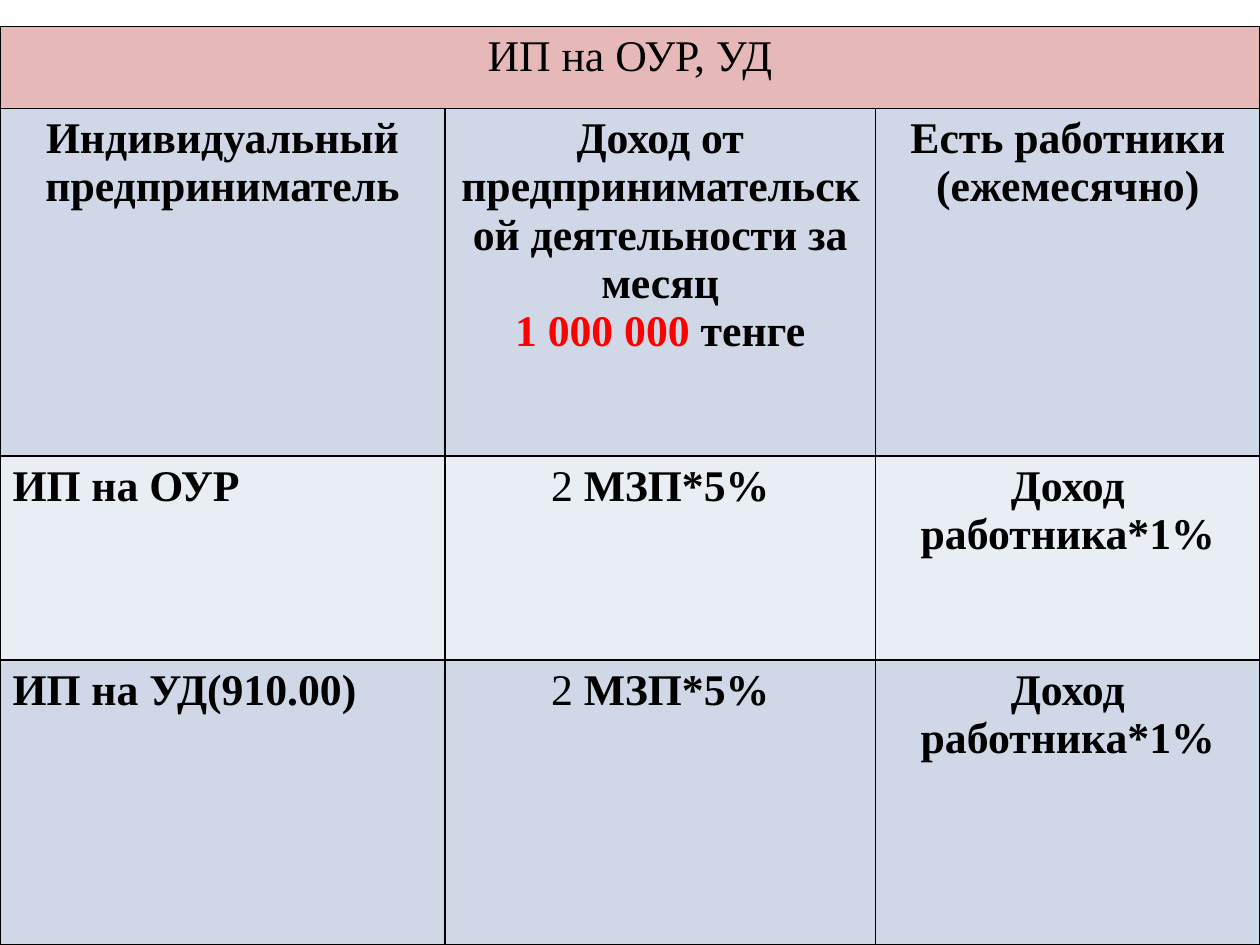
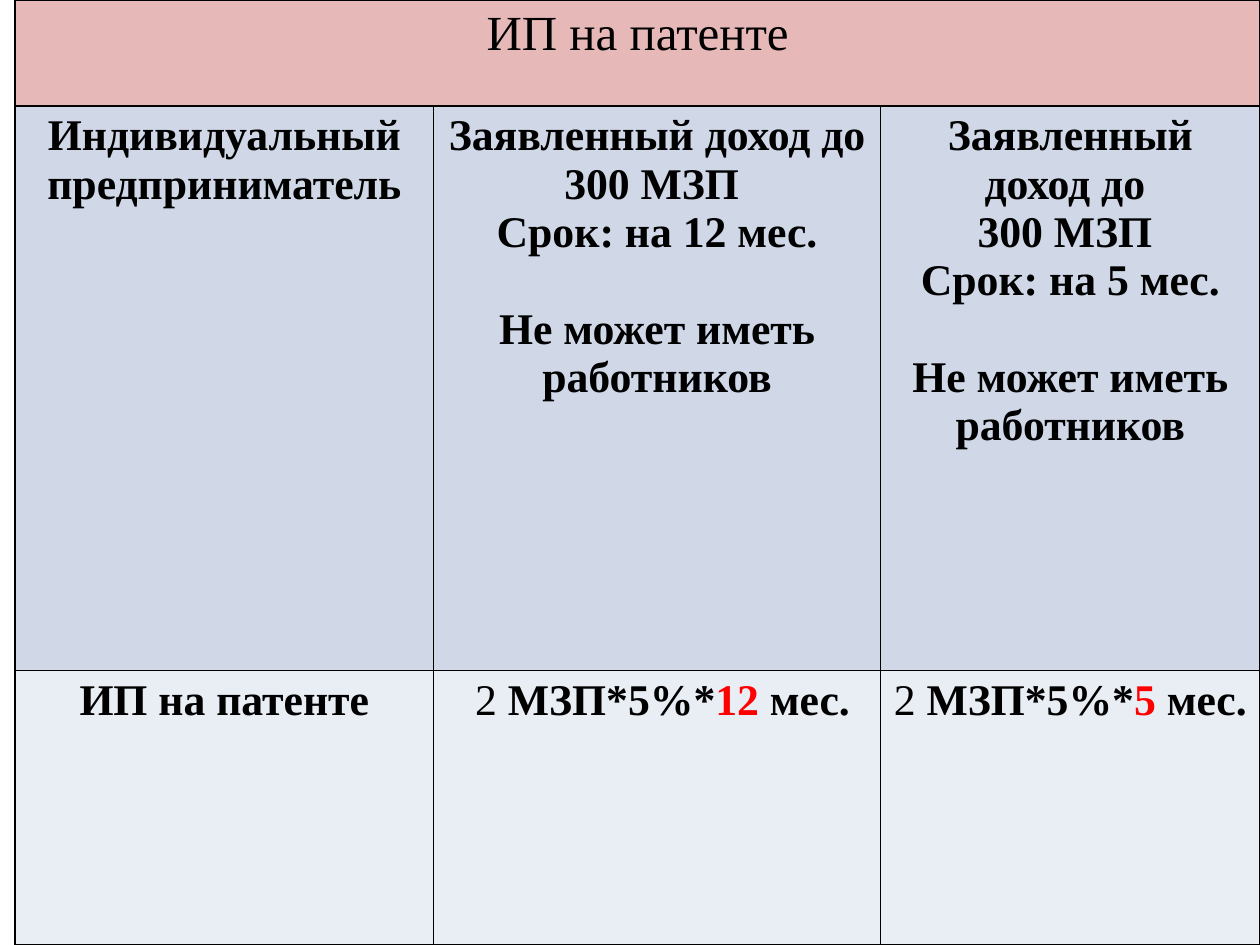
"""Build two slides with tables of monthly payments for sole traders."""
from dataclasses import dataclass

from lxml import etree
from pptx import Presentation
from pptx.dml.color import RGBColor
from pptx.enum.text import PP_ALIGN
from pptx.oxml.ns import qn
from pptx.util import Inches, Pt

LEFT, MID = PP_ALIGN.LEFT, PP_ALIGN.CENTER
FONT = "Times New Roman"
SIZE = 25
GAP = Pt(27.6)
HUES = {
    "ink": "000000",
    "red": "FF0000",
    "head": "E6B9B8",
    "dark": "D0D8E8",
    "pale": "E9EDF4",
}


@dataclass(frozen=True)
class Bit:
    text: str
    bold: bool = True
    hue: str = "ink"
    size: float = SIZE


@dataclass(frozen=True)
class Line:
    bits: tuple[Bit, ...]
    align: PP_ALIGN = MID
    gap: bool = False


Entry = tuple[Line, ...]


@dataclass(frozen=True)
class Grid:
    title: Bit
    left: float
    top: float
    cols: tuple[float, ...]
    rows: tuple[float, ...]
    body: tuple[tuple[Entry, ...], ...]


def plain(*texts: str, align: PP_ALIGN = MID) -> Entry:
    return tuple(Line((Bit(text),), align) for text in texts)


def rate(*bits: Bit, lead: str = "2 ") -> Entry:
    return (Line((Bit(lead, bold=False), *bits)),)


def term(months: int) -> Entry:
    lines = plain("Заявленный доход до ", "300 МЗП ", f"Срок: на {months} мес.")
    return (*lines, Line((Bit("Не может иметь работников"),), gap=True))


def patent(months: int, lead: str = "2 ") -> Entry:
    return rate(Bit("МЗП*5%*"), Bit(str(months), hue="red"), Bit(" мес."), lead=lead)


def regime(name: str) -> tuple[Entry, ...]:
    return plain(name, align=LEFT), rate(Bit("МЗП*5%")), plain("Доход работника*1%")


OWNER = plain("Индивидуальный предприниматель")
INCOME = (
    *plain("Доход от предпринимательской деятельности за месяц"),
    Line((Bit("1 000 000 ", hue="red"), Bit("тенге"))),
)

GRIDS = (
    Grid(
        Bit("ИП на ОУР, УД", bold=False), 0, 0.21,
        (3.53, 3.42, 3.05), (0.65, 2.76, 1.62, 2.26),
        (
            (OWNER, INCOME, plain("Есть работники", "(ежемесячно)")),
            regime("ИП на ОУР"),
            regime("ИП на УД(910.00)"),
        ),
    ),
    Grid(
        Bit("ИП на патенте", bold=False, size=28), 0.12, 0,
        (3.32, 3.55, 3.01), (0.84, 4.48, 2.18),
        (
            (OWNER, term(12), term(5)),
            (plain("ИП на патенте"), patent(12, " 2 "), patent(5)),
        ),
    ),
)


def paint(cell, hue: str) -> None:
    props = cell._tc.get_or_add_tcPr()
    for side in ("lnL", "lnR", "lnT", "lnB"):
        edge = etree.SubElement(props, qn(f"a:{side}"), w=str(Pt(1)))
        fill = etree.SubElement(edge, qn("a:solidFill"))
        etree.SubElement(fill, qn("a:srgbClr"), val=HUES["ink"])
    cell.fill.solid()
    cell.fill.fore_color.rgb = RGBColor.from_string(HUES[hue])


def write(cell, entry: Entry) -> None:
    frame = cell.text_frame
    frame.text = "\n" * (len(entry) - 1)
    for para, line in zip(frame.paragraphs, entry):
        para.alignment = line.align
        if line.gap:
            para.space_before = GAP
        for bit in line.bits:
            run = para.add_run()
            run.text = bit.text
            font = run.font
            font.name, font.size, font.bold = FONT, Pt(bit.size), bit.bold
            font.color.rgb = RGBColor.from_string(HUES[bit.hue])


def draw(slide, grid: Grid) -> None:
    table = slide.shapes.add_table(
        len(grid.rows), len(grid.cols), Inches(grid.left), Inches(grid.top),
        Inches(sum(grid.cols)), Inches(sum(grid.rows)),
    ).table
    table.first_row = table.horz_banding = False
    for col, width in zip(table.columns, grid.cols):
        col.width = Inches(width)
    for index, (row, height) in enumerate(zip(table.rows, grid.rows)):
        row.height = Inches(height)
        hue = "head" if index == 0 else ("pale", "dark")[index % 2]
        for cell in row.cells:
            paint(cell, hue)
    table.cell(0, 0).merge(table.cell(0, len(grid.cols) - 1))
    write(table.cell(0, 0), (Line((grid.title,)),))
    for r, entries in enumerate(grid.body, 1):
        for c, entry in enumerate(entries):
            write(table.cell(r, c), entry)


def main() -> None:
    deck = Presentation()
    deck.slide_width, deck.slide_height = Inches(10), Inches(7.5)
    for grid in GRIDS:
        draw(deck.slides.add_slide(deck.slide_layouts[6]), grid)
    deck.save("out.pptx")


if __name__ == "__main__":
    main()
